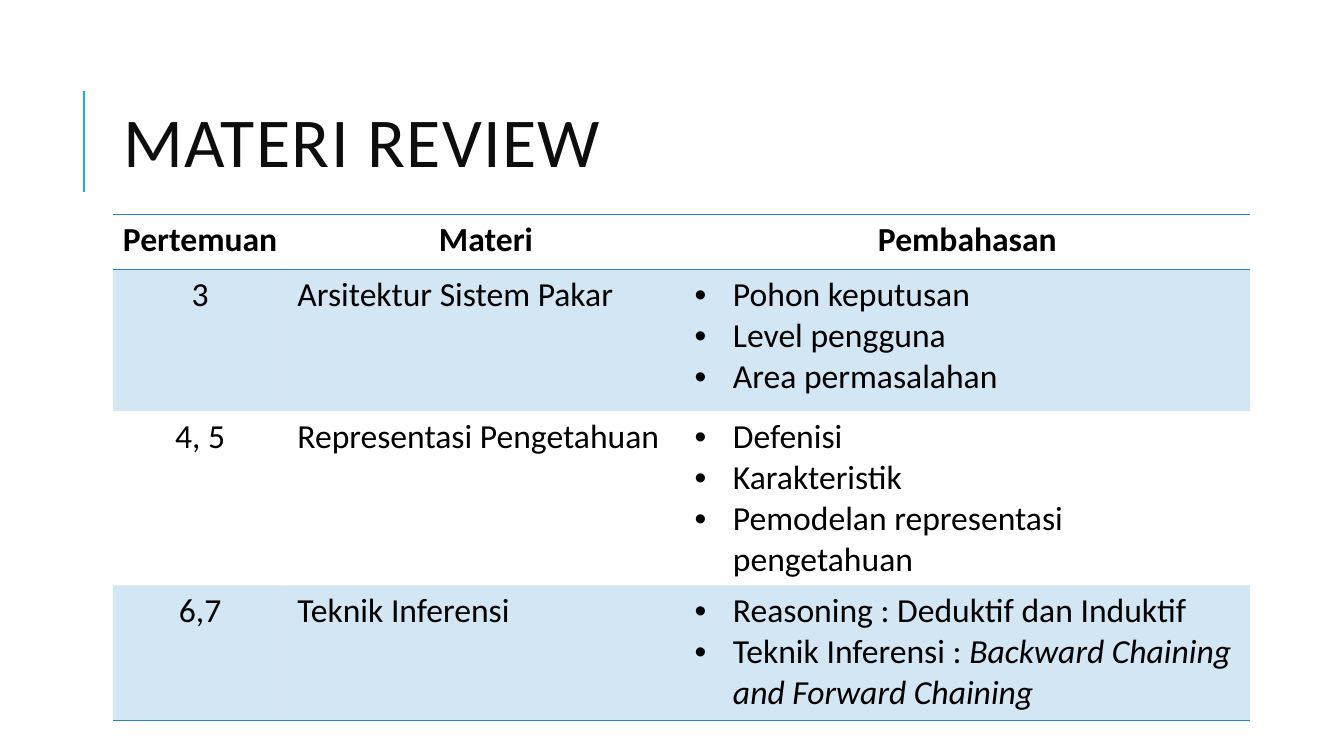
from lxml.etree import SubElement
from pptx import Presentation
from pptx.dml.color import RGBColor
from pptx.enum.shapes import MSO_CONNECTOR
from pptx.enum.text import MSO_ANCHOR, MSO_AUTO_SIZE, PP_ALIGN
from pptx.oxml.ns import qn
from pptx.util import Pt

SCALE = 9144
FONT = "Calibri"
BLUE = "2683C6"
PLAIN = "{2D5ABB26-0587-4C30-8999-92F81FD0307C}"
COLS = [173, 394, 561]
ROWS = [54, 141, 134, 134]
HEAD = ["Pertemuan", "Materi", "Pembahasan"]
BODY = [
    ("3", "Arsitektur Sistem Pakar",
     [["Pohon keputusan"], ["Level pengguna"], ["Area permasalahan"]]),
    ("4, 5", "Representasi Pengetahuan",
     [["Defenisi"], ["Karakteristik"], ["Pemodelan representasi pengetahuan"]]),
    ("6,7", "Teknik Inferensi",
     [["Reasoning : Deduktif dan Induktif"],
      ["Teknik Inferensi : ", "Backward Chaining and Forward Chaining"]]),
]


def px(num):
    return num * SCALE


def color(code):
    return RGBColor.from_string(code)


def style(para, size, code, bold=False):
    font = para.font
    font.name, font.size, font.bold = FONT, Pt(size), bold
    font.color.rgb = color(code)


def add_rule(slide, x, top, end):
    rule = slide.shapes.add_connector(
        MSO_CONNECTOR.STRAIGHT, px(x), px(end), px(x), px(top))
    rule.line.color.rgb = color("1CADE4")
    rule.line.width = Pt(1.5)
    SubElement(rule._element.spPr, qn("a:effectLst"))


def add_title(slide, text):
    title = slide.shapes.title
    title.left, title.top, title.width, title.height = map(px, (112, 64, 1063, 164))
    frame = title.text_frame
    frame.text = text
    frame.word_wrap = True
    frame.auto_size = MSO_AUTO_SIZE.NONE
    frame.vertical_anchor = MSO_ANCHOR.MIDDLE
    para = frame.paragraphs[0]
    para.alignment = PP_ALIGN.LEFT
    para.line_spacing = 0.8
    style(para, 50, "0D0D0D")
    para.runs[0].font._element.set("spc", "100")


def add_edge(cell, side):
    edge = SubElement(cell._tc.get_or_add_tcPr(), qn("a:" + side), w=str(Pt(1)))
    fill = SubElement(edge, qn("a:solidFill"))
    SubElement(fill, qn("a:srgbClr"), val=BLUE)


def shade(cell, tinted):
    if not tinted:
        cell.fill.background()
        return
    cell.fill.solid()
    cell.fill.fore_color.rgb = color(BLUE)
    tint = cell._tc.tcPr.find(qn("a:solidFill")).find(qn("a:srgbClr"))
    SubElement(tint, qn("a:alpha"), val="20000")


def write(cell, text, align, bold=False):
    cell.text = text
    para = cell.text_frame.paragraphs[0]
    para.alignment = align
    style(para, 24, "000000", bold)


def add_list(cell, items):
    frame = cell.text_frame
    for num, (plain, *slant) in enumerate(items):
        para = frame.add_paragraph() if num else frame.paragraphs[0]
        para.add_run().text = plain
        for part in slant:
            run = para.add_run()
            run.text = part
            run.font.italic = True
        props = para._p.get_or_add_pPr()
        props.set("marL", str(px(38)))
        props.set("indent", str(-px(38)))
        SubElement(props, qn("a:buFont"), typeface="Arial")
        SubElement(props, qn("a:buChar"), char="•")
        style(para, 24, "000000")


def add_grid(slide):
    table = slide.shapes.add_table(
        len(ROWS), len(COLS), px(112), px(213), px(sum(COLS)), px(sum(ROWS))).table
    table.first_row = table.horz_banding = False
    table._tbl.tblPr.find(qn("a:tableStyleId")).text = PLAIN
    for col, width in zip(table.columns, COLS):
        col.width = px(width)
    for row, height in zip(table.rows, ROWS):
        row.height = px(height)
    for cell, text in zip(table.rows[0].cells, HEAD):
        write(cell, text, PP_ALIGN.CENTER, True)
        cell.margin_left = cell.margin_right = px(8)
    for num, (week, topic, items) in enumerate(BODY, 1):
        write(table.cell(num, 0), week, PP_ALIGN.CENTER)
        write(table.cell(num, 1), topic, PP_ALIGN.LEFT)
        add_list(table.cell(num, 2), items)
    for num, row in enumerate(table.rows):
        for cell in row.cells:
            if num == 0:
                add_edge(cell, "lnT")
            if num in (0, len(BODY)):
                add_edge(cell, "lnB")
            shade(cell, num % 2 == 1)


def main():
    deck = Presentation()
    deck.slide_width, deck.slide_height = px(1333), px(750)
    slide = deck.slides.add_slide(deck.slide_layouts[5])
    add_rule(slide, 83, 90, 190)
    add_title(slide, "MATERI REVIEW")
    add_grid(slide)
    deck.save("out.pptx")


if __name__ == "__main__":
    main()
